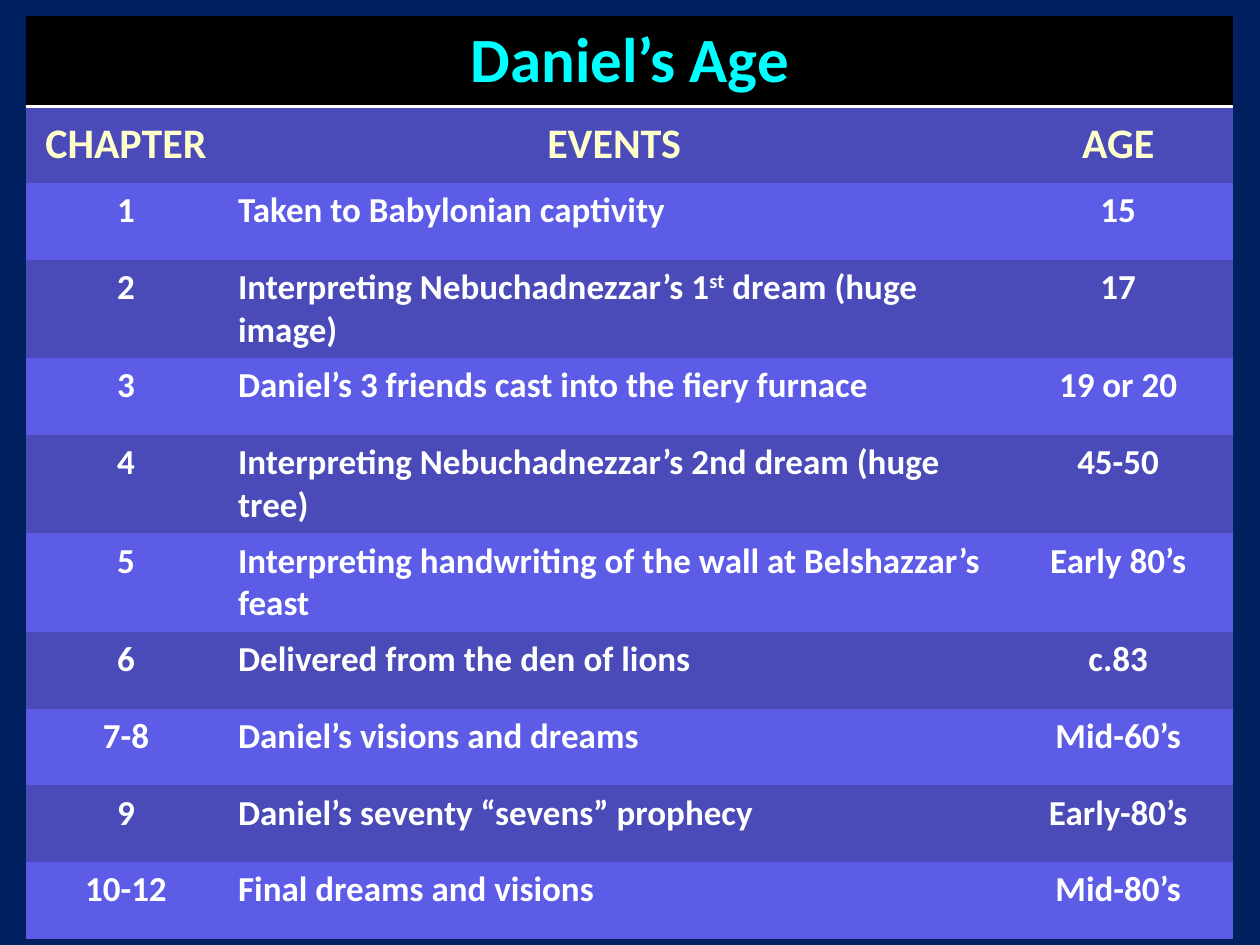
from lxml import etree
from pptx import Presentation
from pptx.dml.color import RGBColor
from pptx.enum import text
from pptx.oxml import ns
from pptx.util import Inches, Pt

NAVY = RGBColor(0x00, 0x20, 0x60)
BLACK = RGBColor(0x00, 0x00, 0x00)
WHITE = RGBColor(0xFF, 0xFF, 0xFF)
CYAN = RGBColor(0x00, 0xFF, 0xFF)
CREAM = RGBColor(0xFF, 0xFF, 0xCC)
DARK_BAND = RGBColor(0x4A, 0x4A, 0xB9)
LIGHT_BAND = RGBColor(0x5C, 0x5C, 0xE7)

TITLE_FORMAT = {"name": "Calibri", "bold": True, "size": Pt(36), "color": CYAN}
HEADING_FORMAT = {**TITLE_FORMAT, "size": Pt(24), "color": CREAM}
BODY_FORMAT = {**TITLE_FORMAT, "size": Pt(20), "color": WHITE}

PLAIN_TABLE_STYLE = "{2D5ABB26-0587-4C30-8999-92F81FD0307C}"
COLUMN_WIDTHS = [1.58, 6.17, 1.83]
TITLE_HEIGHT, ONE_LINE, TWO_LINES = 0.68, 0.61, 0.75
TWO_LINE_CHAPTERS = {"2", "4", "5"}

HEADINGS = ["CHAPTER", "EVENTS", "AGE"]
# A tuple holds the text before, inside and after a superscript
EVENTS = [
    ("1", "Taken to Babylonian captivity", "15"),
    ("2", ("Interpreting Nebuchadnezzar’s 1", "st", " dream (huge image)"), "17"),
    ("3", "Daniel’s 3 friends cast into the fiery furnace", "19 or 20"),
    ("4", "Interpreting Nebuchadnezzar’s 2nd dream (huge tree)", "45-50"),
    ("5", "Interpreting handwriting of the wall at Belshazzar’s feast", "Early 80’s"),
    ("6", "Delivered from the den of lions", "c.83"),
    ("7-8", "Daniel’s visions and dreams", "Mid-60’s"),
    ("9", "Daniel’s seventy “sevens” prophecy", "Early-80’s"),
    ("10-12", "Final dreams and visions", "Mid-80’s"),
]


def format_font(font, values):
    for key, value in values.items():
        if key == "color":
            font.color.rgb = value
        else:
            setattr(font, key, value)


def fill_cell(cell, content, band, font_values, centred=True):
    cell.fill.solid()
    cell.fill.fore_color.rgb = band
    paragraph = cell.text_frame.paragraphs[0]
    paragraph.alignment = text.PP_ALIGN.CENTER if centred else text.PP_ALIGN.LEFT
    parts = content if isinstance(content, tuple) else (content,)
    for index, part in enumerate(parts):
        run = paragraph.add_run()
        run.text = part
        format_font(run.font, font_values)
        if index == 1:
            run._r.get_or_add_rPr().set("baseline", "30000")


def add_bottom_border(cell, color, width):
    line = etree.Element(ns.qn("a:lnB"), w=str(Pt(width)))
    solid = etree.SubElement(line, ns.qn("a:solidFill"))
    etree.SubElement(solid, ns.qn("a:srgbClr"), val=str(color))
    # Borders come before the fill in the cell properties
    cell._tc.get_or_add_tcPr().insert(0, line)


def add_age_table(slide):
    heights = [TITLE_HEIGHT, ONE_LINE] + [
        TWO_LINES if chapter in TWO_LINE_CHAPTERS else ONE_LINE
        for chapter, _, _ in EVENTS
    ]
    ages = slide.shapes.add_table(
        len(heights), len(COLUMN_WIDTHS), Inches(0.21), Inches(0.13),
        Inches(sum(COLUMN_WIDTHS)), Inches(sum(heights))).table
    ages._tbl.tblPr.find(ns.qn("a:tableStyleId")).text = PLAIN_TABLE_STYLE
    for column, width in zip(ages.columns, COLUMN_WIDTHS):
        column.width = Inches(width)
    for row, height in zip(ages.rows, heights):
        row.height = Inches(height)

    # Title across all columns
    ages.cell(0, 0).merge(ages.cell(0, len(COLUMN_WIDTHS) - 1))
    fill_cell(ages.cell(0, 0), "Daniel’s Age", BLACK, TITLE_FORMAT)
    for column in range(len(COLUMN_WIDTHS)):
        add_bottom_border(ages.cell(0, column), WHITE, 2)

    # Column headings
    for column, heading in enumerate(HEADINGS):
        cell = ages.cell(1, column)
        fill_cell(cell, heading, DARK_BAND, HEADING_FORMAT)
        cell.vertical_anchor = text.MSO_ANCHOR.MIDDLE

    # Chapters in alternating bands
    for row, event in enumerate(EVENTS, start=2):
        band = DARK_BAND if row % 2 else LIGHT_BAND
        for column, content in enumerate(event):
            fill_cell(ages.cell(row, column), content, band, BODY_FORMAT,
                      centred=column != 1)


def main():
    deck = Presentation()
    deck.slide_width, deck.slide_height = Inches(10), Inches(7.5)
    slide = deck.slides.add_slide(deck.slide_layouts[6])
    slide.background.fill.solid()
    slide.background.fill.fore_color.rgb = NAVY
    add_age_table(slide)
    deck.save("out.pptx")


if __name__ == "__main__":
    main()
